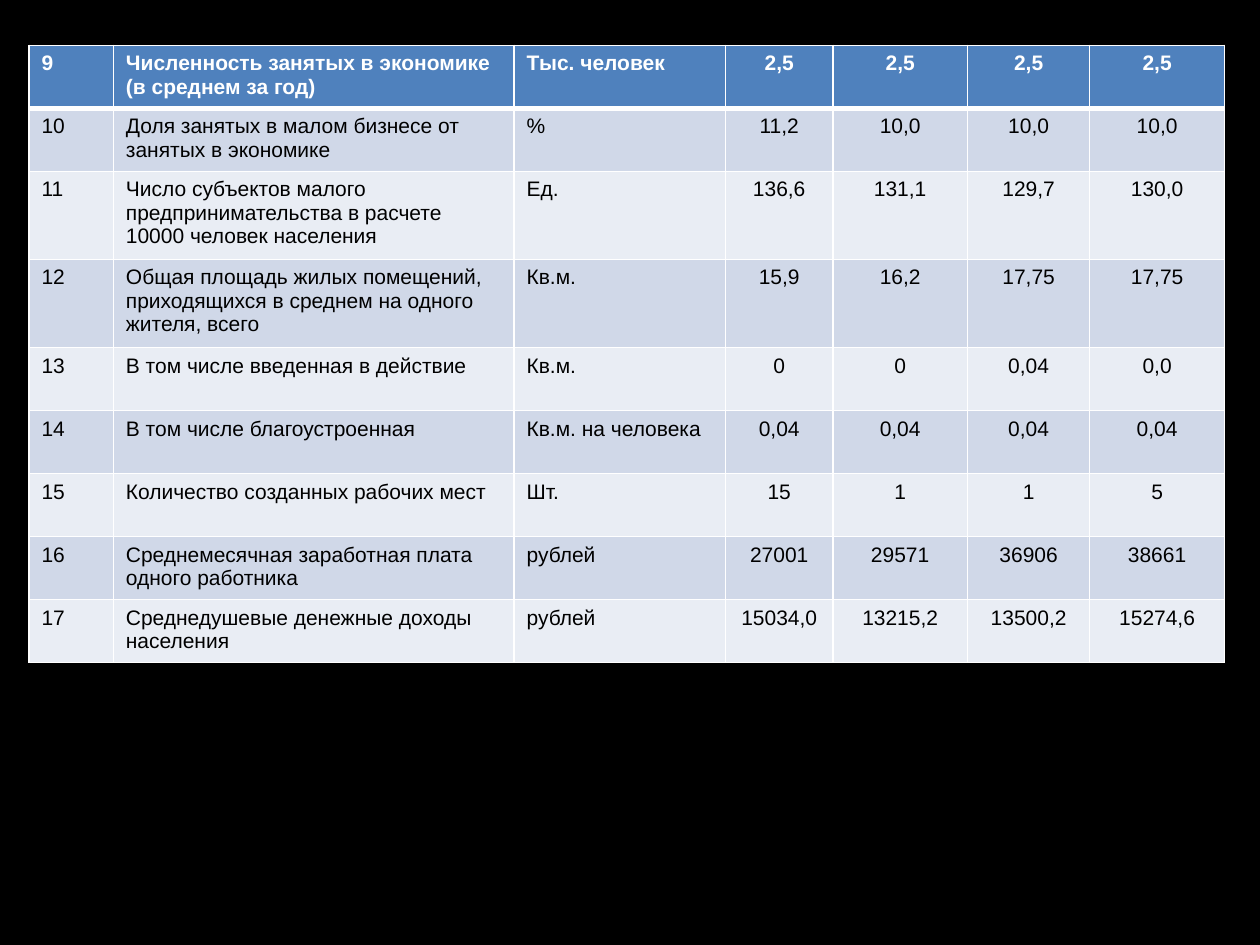
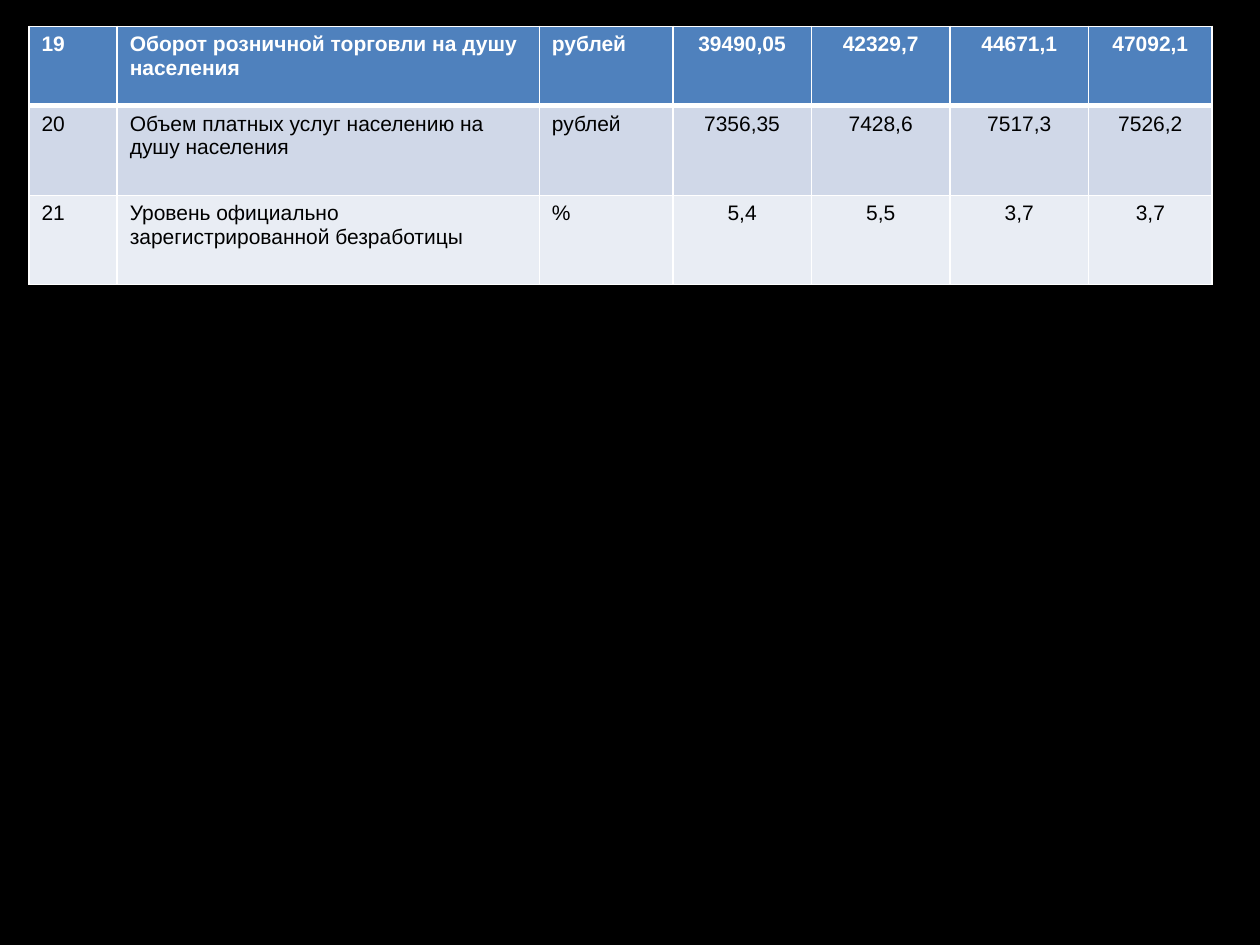
from lxml.etree import SubElement
from pptx import Presentation
from pptx.dml.color import RGBColor
from pptx.enum.text import PP_ALIGN
from pptx.oxml.ns import qn
from pptx.util import Inches, Pt

BLACK = RGBColor(0x00, 0x00, 0x00)
WHITE = RGBColor(0xFF, 0xFF, 0xFF)
HEADER_BLUE = RGBColor(0x4F, 0x81, 0xBD)
BAND_DARK = RGBColor(0xD0, 0xD8, 0xE8)
BAND_LIGHT = RGBColor(0xE9, 0xED, 0xF4)
FONT = "Arial"
FONT_SIZE = Pt(12)
TABLE_LEFT = 0.23
FIRST_VALUE_COLUMN = 3

INDICATOR_TABLES = [
    {
        "top": 0.36,
        "widths": [0.67, 3.18, 1.68, 0.85, 1.07, 0.97, 1.07],
        "heights": [0.5, 0.5, 0.7, 0.7, 0.5, 0.5, 0.5, 0.5, 0.5],
        "rows": [
            ["9", "Численность занятых в экономике (в среднем за год)", "Тыс. человек", "2,5", "2,5", "2,5", "2,5"],
            ["10", "Доля занятых в малом бизнесе от занятых в экономике", "%", "11,2", "10,0", "10,0", "10,0"],
            ["11", "Число субъектов малого предпринимательства в расчете 10000 человек населения", "Ед.",
             "136,6", "131,1", "129,7", "130,0"],
            ["12", "Общая площадь жилых помещений, приходящихся в среднем на одного жителя, всего", "Кв.м.",
             "15,9", "16,2", "17,75", "17,75"],
            ["13", "В том числе введенная в действие", "Кв.м.", "0", "0", "0,04", "0,0"],
            ["14", "В том числе благоустроенная", "Кв.м. на человека", "0,04", "0,04", "0,04", "0,04"],
            ["15", "Количество созданных рабочих мест", "Шт.", "15", "1", "1", "5"],
            ["16", "Среднемесячная заработная плата одного работника", "рублей", "27001", "29571", "36906", "38661"],
            ["17", "Среднедушевые денежные доходы населения", "рублей", "15034,0", "13215,2", "13500,2", "15274,6"],
        ],
    },
    {
        "top": 0.21,
        "widths": [0.7, 3.35, 1.06, 1.1, 1.1, 1.1, 0.98],
        "heights": [0.63, 0.71, 0.71],
        "rows": [
            ["19", "Оборот розничной торговли на душу населения", "рублей", "39490,05", "42329,7", "44671,1", "47092,1"],
            ["20", "Объем платных услуг населению на душу населения", "рублей", "7356,35", "7428,6", "7517,3", "7526,2"],
            ["21", "Уровень официально зарегистрированной безработицы", "%", "5,4", "5,5", "3,7", "3,7"],
        ],
    },
]


def add_borders(cell, top, bottom):
    properties = cell._tc.get_or_add_tcPr()
    for side, points in (("L", 1), ("R", 1), ("T", top), ("B", bottom)):
        line = SubElement(properties, qn(f"a:ln{side}"), w=str(Pt(points)))
        color = SubElement(SubElement(line, qn("a:solidFill")), qn("a:srgbClr"))
        color.set("val", str(WHITE))


presentation = Presentation()
presentation.slide_width = Inches(10)
presentation.slide_height = Inches(7.5)

for indicators in INDICATOR_TABLES:
    slide = presentation.slides.add_slide(presentation.slide_layouts[6])
    slide.background.fill.solid()
    slide.background.fill.fore_color.rgb = BLACK

    widths, heights, rows = indicators["widths"], indicators["heights"], indicators["rows"]
    table = slide.shapes.add_table(
        len(rows), len(widths), Inches(TABLE_LEFT), Inches(indicators["top"]),
        Inches(sum(widths)), Inches(sum(heights))).table
    for column, width in zip(table.columns, widths):
        column.width = Inches(width)

    for row_index, values in enumerate(rows):
        table.rows[row_index].height = Inches(heights[row_index])
        is_header = row_index == 0
        band = BAND_DARK if row_index % 2 else BAND_LIGHT
        for column_index, value in enumerate(values):
            cell = table.cell(row_index, column_index)
            add_borders(cell, top=3 if row_index == 1 else 1, bottom=3 if is_header else 1)
            cell.fill.solid()
            cell.fill.fore_color.rgb = HEADER_BLUE if is_header else band
            cell.text = value
            paragraph = cell.text_frame.paragraphs[0]
            paragraph.font.name = FONT
            paragraph.font.size = FONT_SIZE
            paragraph.font.bold = is_header
            paragraph.font.color.rgb = WHITE if is_header else BLACK
            if column_index >= FIRST_VALUE_COLUMN:
                paragraph.alignment = PP_ALIGN.CENTER

presentation.save("out.pptx")
